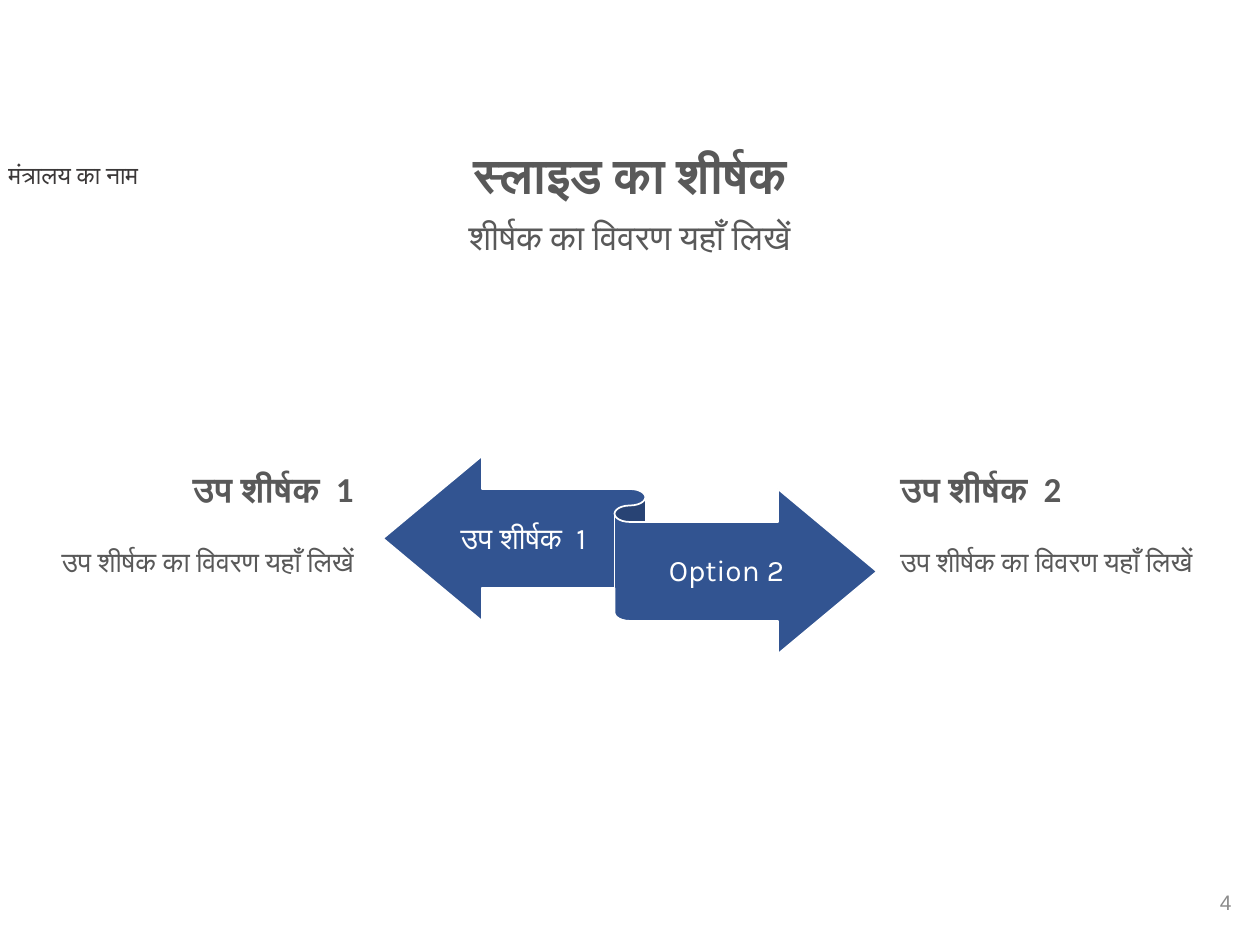
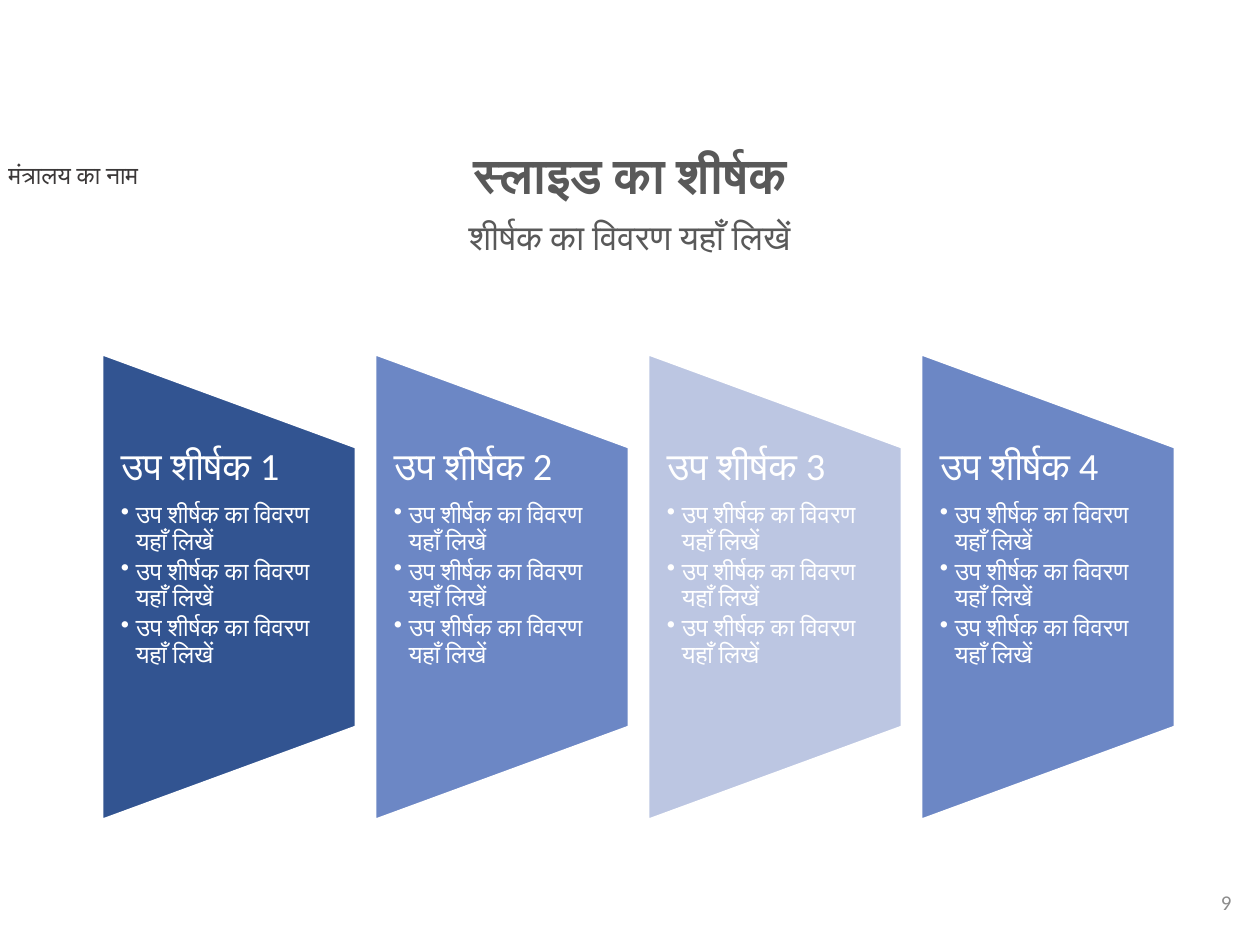
from lxml import etree
from pptx import Presentation
from pptx import util as u
from pptx.dml.color import RGBColor
from pptx.enum import shapes, text
from pptx.oxml import ns

PX_PER_INCH = 126
FONT = "Calibri"
ACCENT_FONT = "Karla"
WHITE = RGBColor(0xFF, 0xFF, 0xFF)
GREY = RGBColor(0x59, 0x59, 0x59)
DARK = RGBColor(0x3B, 0x38, 0x38)
PALE_GREY = RGBColor(0x8C, 0x8C, 0x8C)
NAVY = RGBColor(0x32, 0x54, 0x91)
BLUE = RGBColor(0x6C, 0x87, 0xC5)
PALE_BLUE = RGBColor(0xBC, 0xC6, 0xE2)

LEFT, CENTER, RIGHT = text.PP_ALIGN.LEFT, text.PP_ALIGN.CENTER, text.PP_ALIGN.RIGHT
TOP, MIDDLE = text.MSO_ANCHOR.TOP, text.MSO_ANCHOR.MIDDLE
DETAIL = "उप शीर्षक का विवरण यहाँ लिखें"


def px(length):
    """Turn pixels into EMU."""
    return u.Emu(round(length * u.Inches(1) / PX_PER_INCH))


def write(frame, wording, *, size, color, font=FONT, bold=False, align=LEFT,
          spacing=None, before=None, after=None, bullet_indent=None):
    """Add one formatted paragraph, filling the empty first one if there is one."""
    para = frame.paragraphs[0] if not frame.text else frame.add_paragraph()
    para.alignment = align
    para.line_spacing = spacing
    if before is not None:
        para.space_before = u.Pt(before)
    if after is not None:
        para.space_after = u.Pt(after)
    if bullet_indent:
        props = para._p.get_or_add_pPr()
        props.set("marL", str(px(bullet_indent)))
        props.set("indent", str(-px(bullet_indent)))
        etree.SubElement(props, ns.qn("a:buChar")).set("char", "•")
    span = para.add_run()
    span.text = wording
    span.font.name = font
    span.font.size = u.Pt(size)
    span.font.bold = bold
    span.font.color.rgb = color
    script_font = etree.SubElement(span._r.get_or_add_rPr(), ns.qn("a:cs"))
    script_font.set("typeface", font)


def add_box(page, left, top, width, height, *, anchor=TOP, insets=None):
    """Add a wrapping text box and return its text frame."""
    box = page.shapes.add_textbox(px(left), px(top), px(width), px(height))
    frame = box.text_frame
    frame.word_wrap = True
    frame.vertical_anchor = anchor
    if insets:
        side, edge = insets
        frame.margin_left = frame.margin_right = px(side)
        frame.margin_top = frame.margin_bottom = px(edge)
    return frame


def add_figure(page, kind, left, top, width, height, *, fill, line_width, rotation=0):
    """Add a filled preset shape with a white outline."""
    figure = page.shapes.add_shape(kind, px(left), px(top), px(width), px(height))
    figure.shadow.inherit = False
    figure.rotation = rotation
    figure.fill.solid()
    figure.fill.fore_color.rgb = fill
    figure.line.color.rgb = WHITE
    figure.line.width = u.Pt(line_width)


def add_page(deck, number, number_font=FONT):
    """Add a page with ministry name, title, subtitle and page number."""
    page = deck.slides.add_slide(deck.slide_layouts[5])
    title = page.shapes.title
    title.left, title.top, title.width, title.height = map(px, (234, 145, 793, 59))
    title.text_frame.auto_size = text.MSO_AUTO_SIZE.NONE
    title.text_frame.vertical_anchor = TOP
    write(title.text_frame, "स्लाइड का शीर्षक", size=28, color=GREY, bold=True,
          align=CENTER, spacing=0.9)
    write(add_box(page, 184, 214, 891, 79), "शीर्षक का विवरण यहाँ लिखें",
          size=20, color=GREY, align=CENTER, spacing=0.9)
    write(add_box(page, -4, 154, 275, 43), "मंत्रालय का नाम", size=14, color=DARK)
    write(add_box(page, 960, 877, 284, 50, anchor=MIDDLE), number, size=12,
          color=PALE_GREY, font=number_font, align=RIGHT)
    return page


def add_ribbon_label(page, wording, left, top, width):
    """Label one arm of the ribbon."""
    frame = add_box(page, left, top, width, 97, anchor=MIDDLE, insets=(0, 9))
    write(frame, wording, size=17, color=WHITE, font=ACCENT_FONT, align=CENTER, spacing=0.9)


def add_side_note(page, heading, left, align):
    """Add a heading with its description beside the ribbon."""
    frame = add_box(page, left, 461, 331, 158)
    write(frame, heading, size=20, color=GREY, bold=True, align=align)
    write(frame, DETAIL, size=16, color=GREY, align=align, before=20)


def add_panel(page, heading, left, fill):
    """Add a tapering panel with a heading and three bullets."""
    breadth, length, middle = 254, 466, 587
    add_figure(page, shapes.MSO_SHAPE.FLOWCHART_MANUAL_OPERATION,
               left + (breadth - length) / 2, middle - breadth / 2, length, breadth,
               fill=fill, line_width=1.5, rotation=270)
    frame = add_box(page, left, 447, breadth, 280, insets=(19, 0))
    write(frame, heading, size=22, color=WHITE, spacing=0.9, after=8)
    for _ in range(3):
        write(frame, DETAIL, size=14, color=WHITE, spacing=0.9, after=2, bullet_indent=15)


def add_ribbon_page(deck):
    """Build the page that sets two options against each other."""
    page = add_page(deck, "4", "Arial")
    add_figure(page, shapes.MSO_SHAPE.LEFT_RIGHT_RIBBON, 383, 456, 494, 198,
               fill=NAVY, line_width=1)
    add_ribbon_label(page, "उप शीर्षक  1", 442, 491, 163)
    add_ribbon_label(page, "Option 2", 630, 523, 193)
    add_side_note(page, "उप शीर्षक  1", 35, RIGHT)
    add_side_note(page, "उप शीर्षक  2", 888, LEFT)


def add_panel_page(deck):
    """Build the page with four panels in a row."""
    page = add_page(deck, "9")
    for index, fill in enumerate((NAVY, BLUE, PALE_BLUE, BLUE)):
        add_panel(page, f"उप शीर्षक {index + 1}", 102 + 273 * index, fill)


def main():
    """Build and save the deck."""
    deck = Presentation()
    deck.slide_width, deck.slide_height = px(1260), px(945)
    add_ribbon_page(deck)
    add_panel_page(deck)
    deck.save("out.pptx")


if __name__ == "__main__":
    main()
